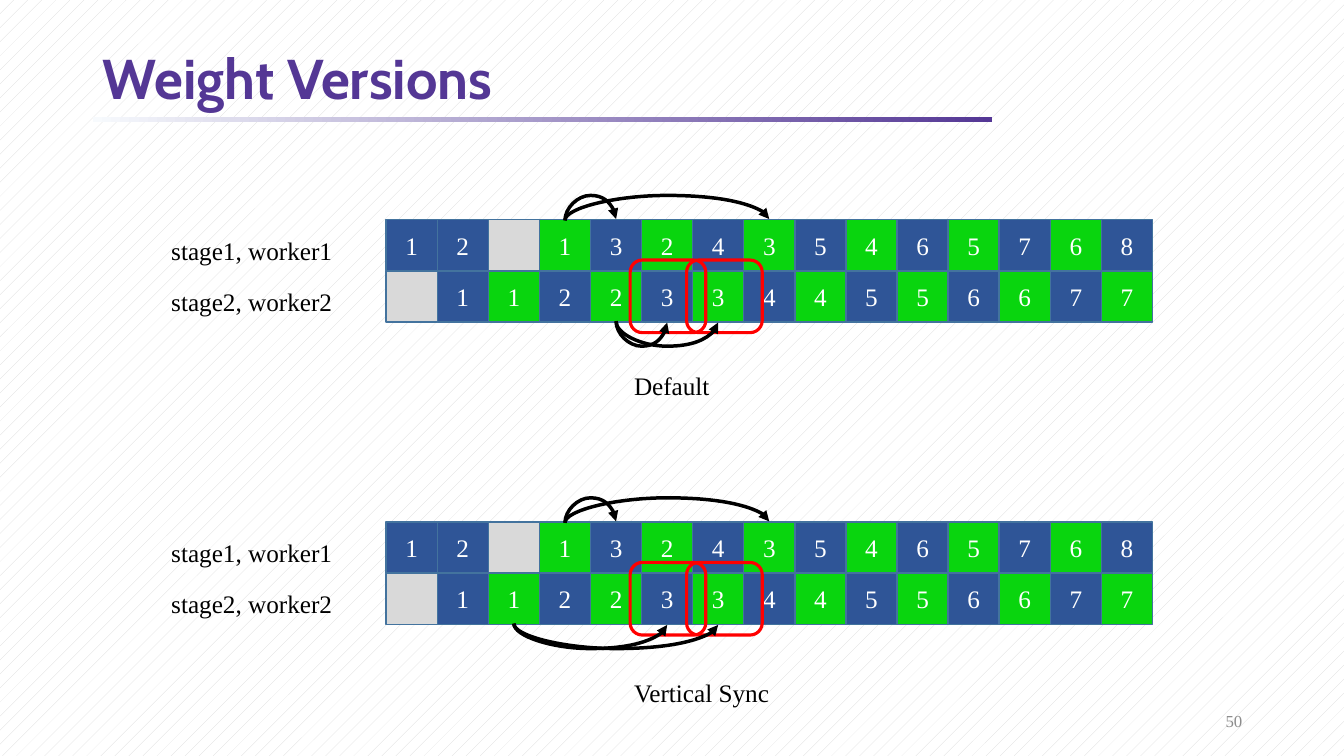
from lxml import etree
from pptx import Presentation, util as u
from pptx.dml import color
from pptx.enum import dml, shapes, text
from pptx.oxml import ns


def rgb(value):
    return color.RGBColor.from_string(value)


def write(frame, words, size, ink, align, font="Times New Roman", bold=False):
    frame.vertical_anchor = text.MSO_ANCHOR.MIDDLE
    paragraph = frame.paragraphs[0]
    paragraph.alignment = align
    run = paragraph.add_run()
    run.text = words
    run.font.size = u.Pt(size)
    run.font.name = font
    run.font.bold = bold
    run.font.color.rgb = rgb(ink)
    return paragraph


deck = Presentation()
deck.slide_width = u.Inches(13.33)
deck.slide_height = u.Inches(7.5)
slide = deck.slides.add_slide(deck.slide_layouts[5])

backdrop = slide.background.fill
backdrop.patterned()
backdrop.pattern = dml.MSO_PATTERN.PERCENT_5
backdrop.fore_color.rgb = rgb("D9D9D9")
backdrop.back_color.rgb = rgb("FFFFFF")

title = slide.shapes.title
title.left, title.top = u.Inches(0.92), u.Inches(0.43)
title.width, title.height = u.Inches(11.5), u.Inches(0.75)
title.text_frame.auto_size = text.MSO_AUTO_SIZE.NONE
heading = write(title.text_frame, "Weight Versions", 40, "543795", text.PP_ALIGN.LEFT, "Cabin", True)
heading.line_spacing = 0.9

underline = slide.shapes.add_shape(
    shapes.MSO_SHAPE.RECTANGLE, u.Inches(0.92), u.Inches(1.16), u.Inches(8.92), u.Inches(0.05))
underline.shadow.inherit = False
underline.line.fill.background()
underline.fill.gradient()
underline.fill.gradient_angle = 0
for stop, position, tint in zip(underline.fill.gradient_stops, (0, 1), ("F7FAFD", "543795")):
    stop.position = position
    stop.color.rgb = rgb(tint)

page = slide.shapes.add_textbox(u.Inches(9.42), u.Inches(6.95), u.Inches(3), u.Inches(0.4))
page.text_frame.word_wrap = True
write(page.text_frame, "50", 12, "8C8C8C", text.PP_ALIGN.RIGHT)

cell = 7.6 / 15
grid_left = 3.83
pass_colors = {"F": "2F5597", "B": "09D50E", "-": "D9D9D9"}
schedule = [
    ("stage1, worker1", "F1 F2 - B1 F3 B2 F4 B3 F5 B4 F6 B5 F7 B6 F8"),
    ("stage2, worker2", "- F1 B1 F2 B2 F3 B3 F4 B4 F5 B5 F6 B6 F7 B7"),
]
diagrams = [
    ("Default", 2.18, 3.62, 0.96, [(4, 5), (4, 6)]),
    ("Vertical Sync", 5.18, 6.67, 1.56, [(2, 5), (2, 6)]),
]

for caption, top, caption_top, caption_width, lower_arcs in diagrams:
    labels = [(caption, 6.19, caption_top, caption_width)]
    for row, (worker, passes) in enumerate(schedule):
        labels.append((worker, 1.6, top + 0.1 + row * cell, 1.81))
        for column, step in enumerate(passes.split()):
            box = slide.shapes.add_shape(
                shapes.MSO_SHAPE.RECTANGLE, u.Inches(grid_left + column * cell),
                u.Inches(top + row * cell), u.Inches(cell), u.Inches(cell))
            box.shadow.inherit = False
            box.fill.solid()
            box.fill.fore_color.rgb = rgb(pass_colors[step[0]])
            box.line.color.rgb = rgb("43739E")
            box.line.width = u.Pt(1)
            if step[1:]:
                write(box.text_frame, step[1:], 18, "FFFFFF", text.PP_ALIGN.CENTER)

    for words, left, label_top, width in labels:
        label = slide.shapes.add_textbox(
            u.Inches(left), u.Inches(label_top), u.Inches(width), u.Inches(0.4))
        label.text_frame.word_wrap = False
        label.text_frame.auto_size = text.MSO_AUTO_SIZE.SHAPE_TO_FIT_TEXT
        write(label.text_frame, words, 18, "000000", text.PP_ALIGN.LEFT)

    for left in (6.25, 6.81):
        highlight = slide.shapes.add_shape(
            shapes.MSO_SHAPE.ROUNDED_RECTANGLE, u.Inches(left), u.Inches(top + 0.4),
            u.Inches(0.75), u.Inches(0.72))
        highlight.shadow.inherit = False
        highlight.fill.background()
        highlight.line.color.rgb = rgb("FF0000")
        highlight.line.width = u.Pt(2.25)

    arcs = [(3, 4, top, 90), (3, 7, top, 90)]
    arcs += [(start, end, top + 2 * cell, 270) for start, end in lower_arcs]
    for start, end, edge, angle in arcs:
        middle = u.Inches(grid_left + (start + end + 1) / 2 * cell)
        reach = u.Inches((end - start) * cell / 2)
        thin = u.Pt(0.5)
        upper, lower = u.Inches(edge) - reach, u.Inches(edge) + reach
        first, last = (lower, upper) if angle == 90 else (upper, lower)
        arc = slide.shapes.add_connector(
            shapes.MSO_CONNECTOR.CURVE, middle + thin, first, middle - thin, last)
        arc.line.color.rgb = rgb("000000")
        arc.line.width = u.Pt(2.5)
        properties = arc._element.spPr
        properties.find(ns.qn("a:xfrm")).set("rot", str(angle * 60000))
        bend = properties.find(ns.qn("a:prstGeom")).find(ns.qn("a:avLst"))
        etree.SubElement(bend, ns.qn("a:gd"), name="adj1", fmla="val 1800000")
        etree.SubElement(properties.find(ns.qn("a:ln")), ns.qn("a:tailEnd"), type="triangle")
        etree.SubElement(properties, ns.qn("a:effectLst"))

deck.save("out.pptx")
